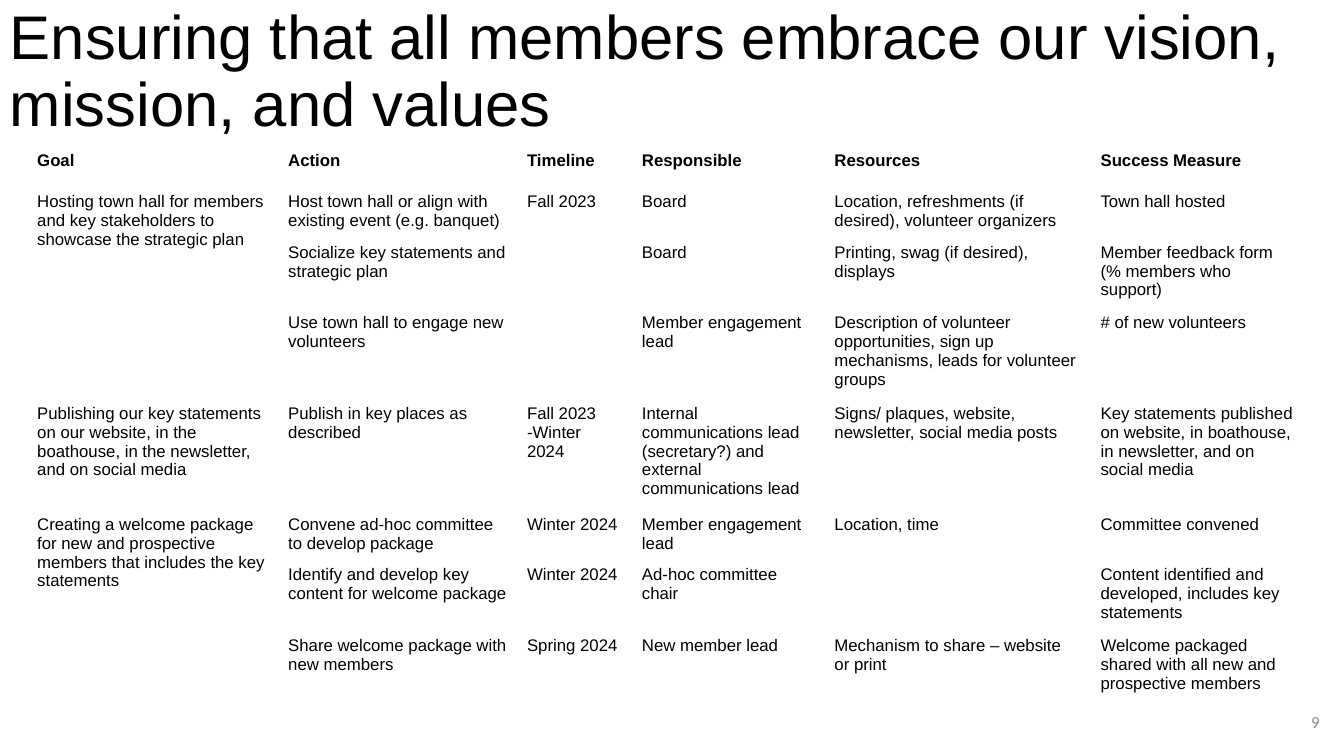
from dataclasses import dataclass

from pptx import Presentation
from pptx.dml.color import RGBColor
from pptx.enum.text import MSO_ANCHOR as Anchor, PP_ALIGN as Align
from pptx.util import Pt


@dataclass(frozen=True)
class Theme:
    ink: str = "000000"
    muted: str = "8C8C8C"
    body_font: str = "Arial"
    number_font: str = "Calibri"
    title_size: int = 44
    body_size: int = 12


class SlideBuilder:
    def __init__(self, slide, theme):
        self.slide = slide
        self.theme = theme

    def add_run(self, paragraph, text, size, font, color, bold=False):
        run = paragraph.add_run()
        run.text = text
        run.font.size = Pt(size)
        run.font.name = font
        run.font.bold = bold
        run.font.color.rgb = RGBColor.from_string(color)

    def text(self, content, left, top, width, height, size, font, color,
             align=Align.LEFT, spacing=1.0):
        box = self.slide.shapes.add_textbox(Pt(left), Pt(top), Pt(width), Pt(height))
        frame = box.text_frame
        frame.word_wrap = True
        frame.vertical_anchor = Anchor.MIDDLE
        paragraph = frame.paragraphs[0]
        paragraph.alignment = align
        paragraph.line_spacing = spacing
        self.add_run(paragraph, content, size, font, color)

    def table(self, rows, left, top, widths, row_height, height, merges):
        frame = self.slide.shapes.add_table(
            len(rows), len(widths), Pt(left), Pt(top), Pt(sum(widths)), Pt(height))
        grid = frame.table
        grid.first_row = False
        grid.horz_banding = False
        for column, width in zip(grid.columns, widths):
            column.width = Pt(width)
        for row in grid.rows:
            row.height = Pt(row_height)
        frame.height = Pt(height)
        for first, last in merges:
            grid.cell(first, 0).merge(grid.cell(last, 0))
        for r, row in enumerate(rows):
            for c, content in enumerate(row):
                cell = grid.cell(r, c)
                cell.fill.background()
                if content:
                    self.add_run(cell.text_frame.paragraphs[0], content,
                                 self.theme.body_size, self.theme.body_font,
                                 self.theme.ink, bold=r == 0)


PLAN = [
    ["Goal", "Action", "Timeline", "Responsible", "Resources", "Success Measure"],
    ["Hosting town hall for members and key stakeholders to showcase the strategic plan",
     "Host town hall or align with existing event (e.g. banquet)", "Fall 2023", "Board",
     "Location, refreshments (if desired), volunteer organizers", "Town hall hosted"],
    ["", "Socialize key statements and strategic plan", "", "Board",
     "Printing, swag (if desired), displays",
     "Member feedback form (% members who support)"],
    ["", "Use town hall to engage new volunteers", "", "Member engagement lead",
     "Description of volunteer opportunities, sign up mechanisms, "
     "leads for volunteer groups", "# of new volunteers"],
    ["Publishing our key statements on our website, in the boathouse, "
     "in the newsletter, and on social media",
     "Publish in key places as described", "Fall 2023 -Winter 2024",
     "Internal communications lead (secretary?) and external communications lead",
     "Signs/ plaques, website, newsletter, social media posts",
     "Key statements published on website, in boathouse, in newsletter, "
     "and on social media"],
    ["Creating a welcome package for new and prospective members "
     "that includes the key statements",
     "Convene ad-hoc committee to develop package", "Winter 2024",
     "Member engagement lead", "Location, time", "Committee convened"],
    ["", "Identify and develop key content for welcome package", "Winter 2024",
     "Ad-hoc committee chair", "",
     "Content identified and developed, includes key statements"],
    ["", "Share welcome package with new members", "Spring 2024", "New member lead",
     "Mechanism to share – website or print",
     "Welcome packaged shared with all new and prospective members"],
]


def main():
    deck = Presentation()
    deck.slide_width, deck.slide_height = Pt(960), Pt(540)
    theme = Theme()
    builder = SlideBuilder(deck.slides.add_slide(deck.slide_layouts[6]), theme)
    builder.text("Ensuring that all members embrace our vision, mission, and values",
                 0, 0, 960, 104.4, theme.title_size, theme.body_font, theme.ink,
                 spacing=0.9)
    builder.table(PLAN, left=19.4, top=104.4,
                  widths=[179.3, 170.6, 82.1, 137.5, 190.1, 151.9],
                  row_height=29.5, height=396.7, merges=[(1, 3), (5, 7)])
    builder.text("9", 733.7, 501, 216, 28.8, theme.body_size, theme.number_font,
                 theme.muted, align=Align.RIGHT)
    deck.save("out.pptx")


if __name__ == "__main__":
    main()
